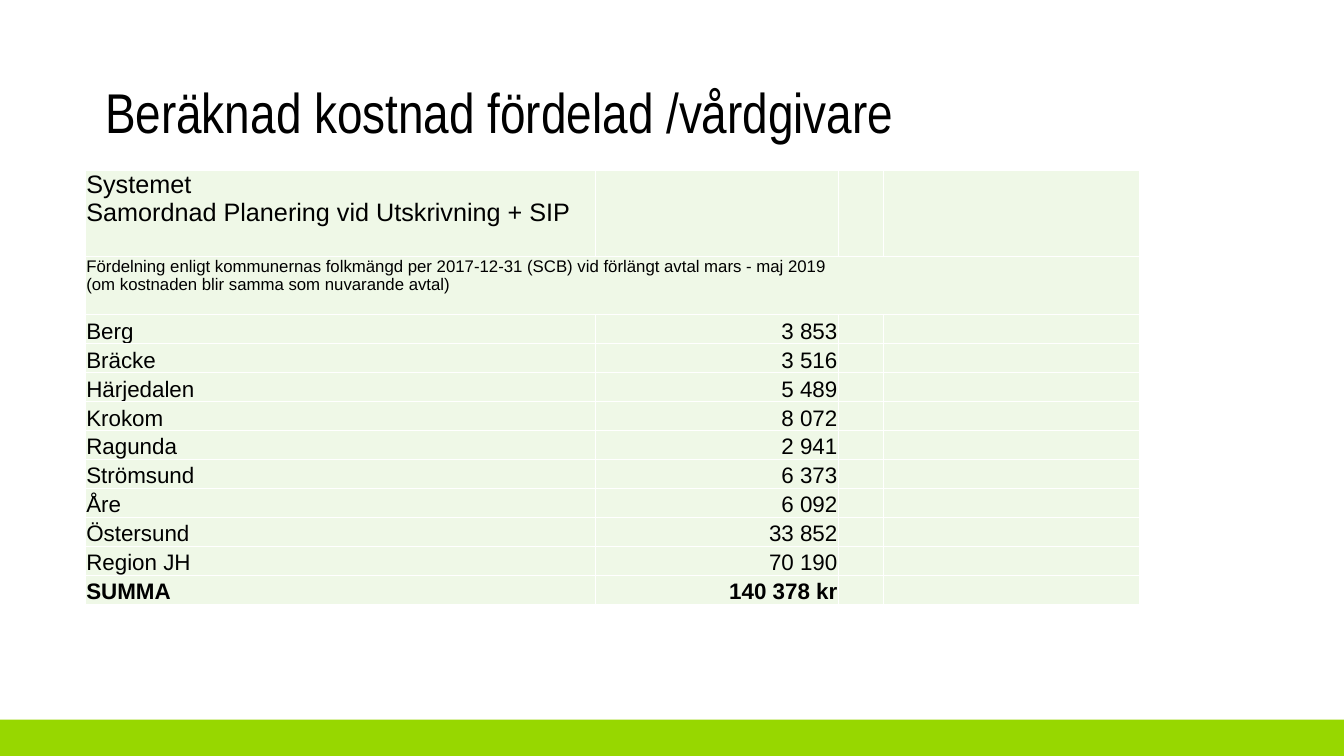
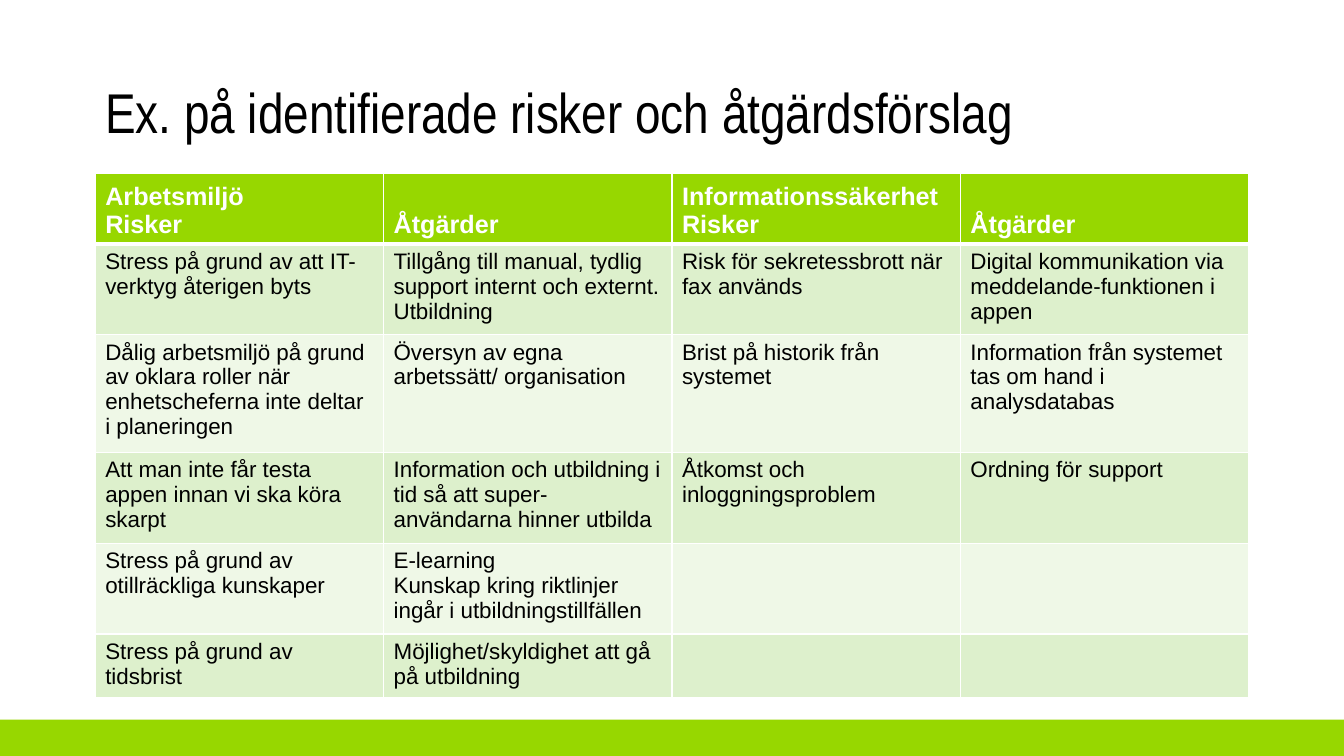
from lxml import etree
from pptx import Presentation
from pptx.dml.color import RGBColor
from pptx.enum.shapes import MSO_SHAPE
from pptx.enum.text import MSO_ANCHOR, PP_ALIGN
from pptx.oxml.ns import qn
from pptx.util import Pt

COLORS = {
    "green": "97D700",
    "mid": "DDF0CC",
    "pale": "EFF8E7",
    "white": "FFFFFF",
    "black": "000000",
}
WIDTH, HEIGHT = 960, 540
BAND_HEIGHT = 26

COSTS = [
    ("Berg", "3 853"),
    ("Bräcke", "3 516"),
    ("Härjedalen", "5 489"),
    ("Krokom", "8 072"),
    ("Ragunda", "2 941"),
    ("Strömsund", "6 373"),
    ("Åre", "6 092"),
    ("Östersund", "33 852"),
    ("Region JH", "70 190"),
    ("SUMMA", "140 378 kr"),
]

RISK_HEADER = ["Arbetsmiljö\nRisker", "Åtgärder", "Informationssäkerhet\nRisker", "Åtgärder"]
RISKS = [
    ["Stress på grund av att IT-verktyg återigen byts",
     "Tillgång till manual, tydlig support internt och externt.\nUtbildning",
     "Risk för sekretessbrott när fax används",
     "Digital kommunikation via meddelande-funktionen i appen"],
    ["Dålig arbetsmiljö på grund av oklara roller när enhetscheferna inte deltar i planeringen",
     "Översyn av egna arbetssätt/ organisation",
     "Brist på historik från systemet",
     "Information från systemet tas om hand i analysdatabas"],
    ["Att man inte får testa appen innan vi ska köra skarpt",
     "Information och utbildning i tid så att super-användarna hinner utbilda",
     "Åtkomst och inloggningsproblem",
     "Ordning för support"],
    ["Stress på grund av otillräckliga kunskaper",
     "E-learning\nKunskap kring riktlinjer ingår i utbildningstillfällen",
     "", ""],
    ["Stress på grund av tidsbrist",
     "Möjlighet/skyldighet att gå på utbildning",
     "", ""],
]


def rgb(name):
    return RGBColor.from_string(COLORS[name])


def style(p, size, color="black", bold=False, name="Arial"):
    p.font.size = Pt(size)
    p.font.name = name
    p.font.bold = bold
    p.font.color.rgb = rgb(color)


def add_slide(prs, title):
    """Add a slide with the bottom band and its title."""
    s = prs.slides.add_slide(prs.slide_layouts[6])
    band = s.shapes.add_shape(MSO_SHAPE.RECTANGLE, Pt(0), Pt(HEIGHT - BAND_HEIGHT),
                              Pt(WIDTH), Pt(BAND_HEIGHT))
    band.shadow.inherit = False
    band.fill.solid()
    band.fill.fore_color.rgb = rgb("green")
    band.line.fill.background()

    tf = s.shapes.add_textbox(Pt(68), Pt(57), Pt(824), Pt(51)).text_frame
    tf.word_wrap = True
    tf.vertical_anchor = MSO_ANCHOR.MIDDLE
    p = tf.paragraphs[0]
    p.text = title
    p.line_spacing = 0.9
    style(p, 40, name="Arial Narrow")
    return s


def add_grid(s, left, top, widths, heights):
    """Add a plain table with the given column widths and row heights."""
    frame = s.shapes.add_table(len(heights), len(widths), Pt(left), Pt(top),
                               Pt(sum(widths)), Pt(sum(heights)))
    table = frame.table
    table.first_row = table.horz_banding = False
    for column, width in zip(table.columns, widths):
        column.width = Pt(width)
    for row, height in zip(table.rows, heights):
        row.height = Pt(height)
    return table


def set_borders(cell, bottom):
    """Draw white cell borders; they must precede the fill in tcPr."""
    tc_pr = cell._tc.get_or_add_tcPr()
    for i, (side, width) in enumerate([("L", 1), ("R", 1), ("T", 1), ("B", bottom)]):
        ln = etree.Element(qn(f"a:ln{side}"), w=str(Pt(width)))
        fill = etree.SubElement(ln, qn("a:solidFill"))
        etree.SubElement(fill, qn("a:srgbClr"), val=COLORS["white"])
        tc_pr.insert(i, ln)


def fill_cell(cell, text, size, fill="pale", color="black", bold=False,
              align=PP_ALIGN.LEFT, anchor=MSO_ANCHOR.TOP, margins=(7.2, 3.6), bottom=1):
    cell.margin_left = cell.margin_right = Pt(margins[0])
    cell.margin_top = cell.margin_bottom = Pt(margins[1])
    cell.vertical_anchor = anchor
    cell.text = text
    for p in cell.text_frame.paragraphs:
        p.alignment = align
        style(p, size, color, bold)
    cell.fill.solid()
    cell.fill.fore_color.rgb = rgb(fill)
    set_borders(cell, bottom)


def cost_slide(prs):
    s = add_slide(prs, "Beräknad kostnad fördelad /vårdgivare")
    table = add_grid(s, 61, 122, [364.3, 173.5, 32.2, 183],
                     [61.4, 41.5] + [20.7] * len(COSTS))
    tight = (0.7, 0)

    # Heading rows
    headings = [
        ("Systemet\nSamordnad Planering vid Utskrivning + SIP", 18),
        ("Fördelning enligt kommunernas folkmängd per 2017-12-31 (SCB) "
         "vid förlängt avtal mars - maj 2019\n"
         "(om kostnaden blir samma som nuvarande avtal)", 12),
    ]
    for i, (text, size) in enumerate(headings):
        for j in range(4):
            fill_cell(table.cell(i, j), "" if j else text, size, margins=tight)
    table.cell(1, 0).merge(table.cell(1, 3))

    # Cost per care provider, with the total last
    for i, (provider, cost) in enumerate(COSTS, len(headings)):
        for j, text in enumerate([provider, cost, "", ""]):
            fill_cell(table.cell(i, j), text, 16, bold=provider == "SUMMA",
                      align=PP_ALIGN.RIGHT if j == 1 else PP_ALIGN.LEFT,
                      anchor=MSO_ANCHOR.BOTTOM, margins=tight)


def risk_slide(prs):
    s = add_slide(prs, "Ex. på identifierade risker och åtgärdsförslag")
    table = add_grid(s, 68, 124, [206] * 4, [46.5, 60.5, 78.5, 60.5, 60.5, 43])

    # Header row
    for j, text in enumerate(RISK_HEADER):
        fill_cell(table.cell(0, j), text, 18, "green", "white", bold=True,
                  anchor=MSO_ANCHOR.BOTTOM, bottom=3)

    # Banded body rows
    for i, row in enumerate(RISKS, 1):
        for j, text in enumerate(row):
            fill_cell(table.cell(i, j), text, 16, "mid" if i % 2 else "pale")


def main():
    prs = Presentation()
    prs.slide_width, prs.slide_height = Pt(WIDTH), Pt(HEIGHT)
    cost_slide(prs)
    risk_slide(prs)
    prs.save("out.pptx")


if __name__ == "__main__":
    main()
